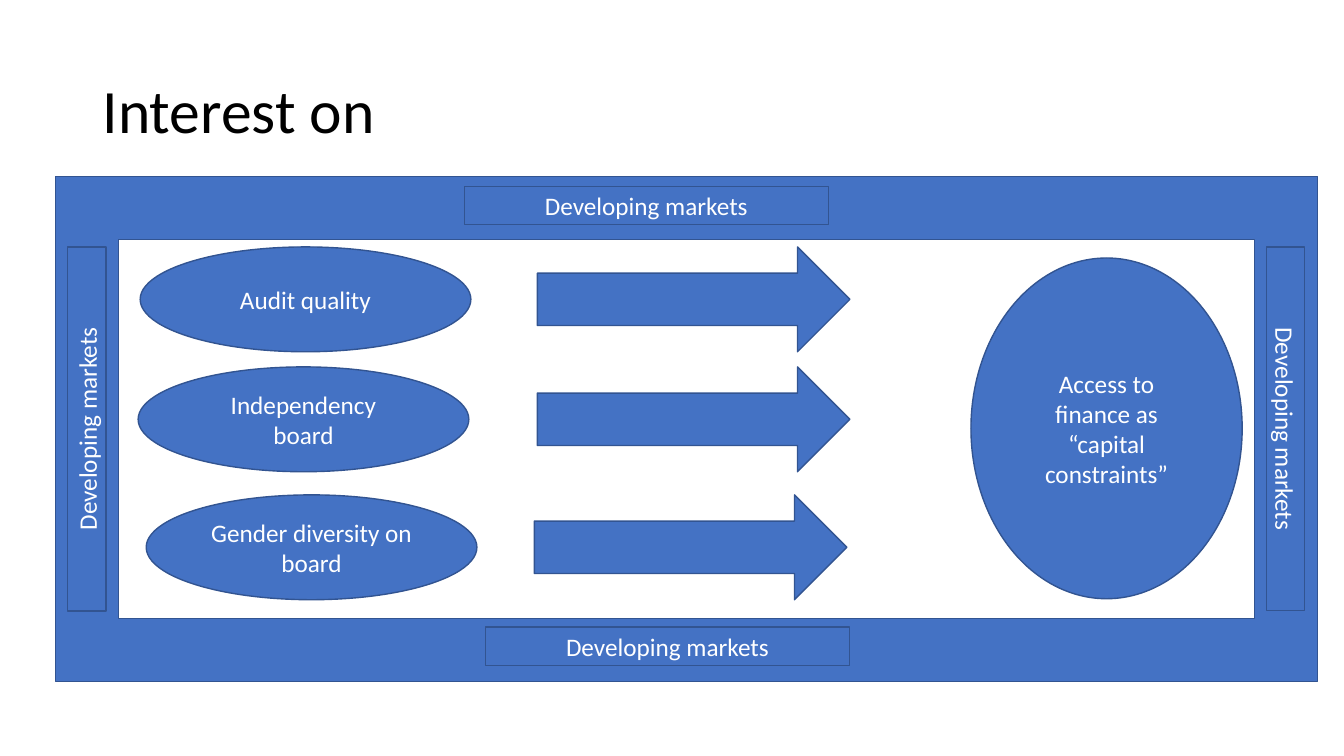
from pptx import Presentation, util as u
from pptx.dml.color import RGBColor
from pptx.enum import shapes, text

BLUE = RGBColor(0x44, 0x72, 0xC4)
EDGE = RGBColor(0x32, 0x54, 0x91)
WHITE = RGBColor(0xFF, 0xFF, 0xFF)
BLACK = RGBColor(0, 0, 0)
KIND = shapes.MSO_SHAPE


def write(frame, words, size, color, align):
    frame.word_wrap = True
    frame.vertical_anchor = text.MSO_ANCHOR.MIDDLE
    frame.text = words
    para = frame.paragraphs[0]
    para.alignment = align
    para.font.name = "Calibri"
    para.font.size = u.Pt(size)
    para.font.color.rgb = color
    return para


def add_form(slide, kind, box, words="", turn=0):
    """Draw a blue outlined shape with an optional centred label."""
    form = slide.shapes.add_shape(kind, *map(u.Inches, box))
    form.shadow.inherit = False
    form.fill.solid()
    form.fill.fore_color.rgb = BLUE
    form.line.color.rgb = EDGE
    form.line.width = u.Pt(1)
    form.rotation = turn
    if words:
        write(form.text_frame, words, 18, WHITE, text.PP_ALIGN.CENTER)


def add_title(slide, box, words):
    frame = slide.shapes.add_textbox(*map(u.Inches, box)).text_frame
    para = write(frame, words, 44, BLACK, text.PP_ALIGN.LEFT)
    para.line_spacing = 0.9


def add_market(slide, box):
    """Draw the frame and a label on each of its four sides."""
    left, top, width, height = box
    add_form(slide, KIND.FRAME, box)
    long, thin = 3.61, 0.38
    mid = top + height / 2
    sides = [
        (left + 5.86, top + 0.29, 0),
        (left + 6.07, top + height - 0.35, 0),
        (left + width - 0.32, mid, 90),
        (left + 0.31, mid, 270),
    ]
    for x, y, turn in sides:
        spot = (x - long / 2, y - thin / 2, long, thin)
        add_form(slide, KIND.RECTANGLE, spot, "Developing markets", turn)


def add_model(slide, box):
    """Draw the factors, their arrows and the outcome inside the frame."""
    left, top, width, height = box
    tall = 1.04
    rows = [
        ("Audit quality", 0.02, 0, 3.96),
        ("Independency\vboard", 0, 1.19, 3.96),
        ("Gender diversity on board", 0.08, 2.46, 3.93),
    ]
    for words, shift, down, gap in rows:
        y = top + down
        add_form(slide, KIND.OVAL, (left + shift, y, 3.28, tall), words)
        add_form(slide, KIND.RIGHT_ARROW, (left + gap, y, 3.1, tall))
    wide = 2.69
    add_form(slide, KIND.OVAL,
             (left + width - wide, top + 0.11, wide, height - 0.12),
             "Access to finance as “capital constraints”")


def main():
    deck = Presentation()
    deck.slide_width, deck.slide_height = u.Inches(13.33), u.Inches(7.5)
    slide = deck.slides.add_slide(deck.slide_layouts[6])
    add_title(slide, (0.92, 0.4, 11.5, 1.45), "Interest on")
    add_market(slide, (0.55, 1.75, 12.52, 5.01))
    add_model(slide, (1.37, 2.45, 10.95, 3.5))
    deck.save("out.pptx")


if __name__ == "__main__":
    main()
